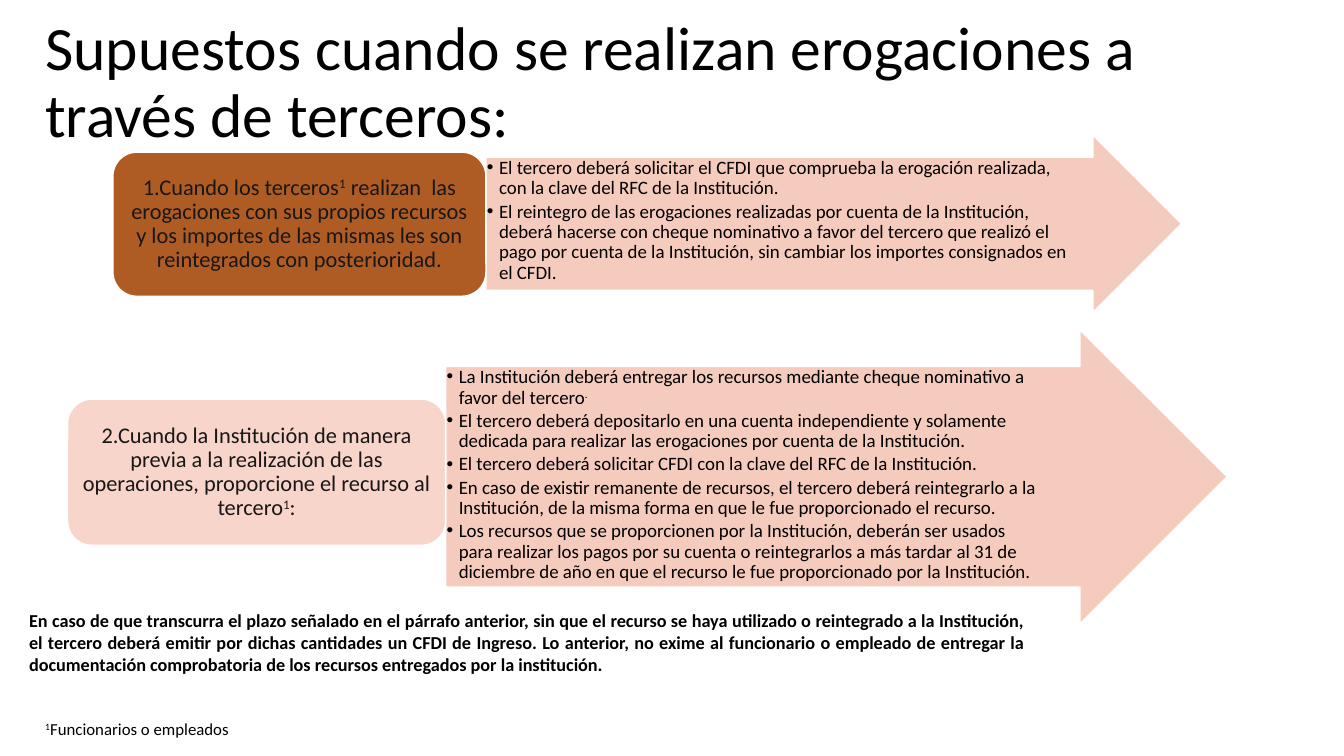
from pptx import Presentation
from pptx.dml.color import RGBColor
from pptx.enum.shapes import MSO_SHAPE
from pptx.enum.text import MSO_ANCHOR, PP_ALIGN
from pptx.oxml.ns import qn
from pptx.util import Inches, Pt
from lxml import etree

ARROW, ROUNDED = MSO_SHAPE.RIGHT_ARROW, MSO_SHAPE.ROUNDED_RECTANGLE
TOP, MIDDLE = MSO_ANCHOR.TOP, MSO_ANCHOR.MIDDLE
LEFT, CENTER, JUSTIFY = PP_ALIGN.LEFT, PP_ALIGN.CENTER, PP_ALIGN.JUSTIFY

BLACK = RGBColor(0x00, 0x00, 0x00)
WHITE = RGBColor(0xFF, 0xFF, 0xFF)
CHARCOAL = RGBColor(0x18, 0x17, 0x17)
RUST = RGBColor(0xAF, 0x5C, 0x24)
BLUSH = RGBColor(0xF7, 0xD5, 0xCA)
SALMON = RGBColor(0xF5, 0xC6, 0xB6)

FONT = "Calibri"
SUPERSCRIPT = "30000"
BULLET_INDENT = 0.12

TITLE = "Supuestos cuando se realizan erogaciones a través de terceros:"
CLOSING = (
    "En caso de que transcurra el plazo señalado en el párrafo anterior, sin que el recurso "
    "se haya utilizado o reintegrado a la Institución, el tercero deberá emitir por dichas "
    "cantidades un CFDI de Ingreso. Lo anterior, no exime al funcionario o empleado de entregar "
    "la documentación comprobatoria de los recursos entregados por la institución."
)

# Each paragraph is a list of spans; every second span is raised.
CASES = [
    {
        "label_box": (1.12, 1.51, 3.7, 1.43),
        "arrow_box": (4.82, 1.34, 6.9, 1.76),
        "color": RUST,
        "label": [
            "1.Cuando los terceros", "1",
            " realizan  las erogaciones con sus propios recursos y los importes de las mismas "
            "les son reintegrados con posterioridad.",
        ],
        "rules": [
            ["El tercero deberá solicitar el CFDI que comprueba la erogación realizada, con la "
             "clave del RFC de la Institución."],
            ["El reintegro de las erogaciones realizadas por cuenta de la Institución, deberá "
             "hacerse con cheque nominativo a favor del tercero que realizó el pago por cuenta "
             "de la Institución, sin cambiar los importes consignados en el CFDI."],
        ],
    },
    {
        "label_box": (0.67, 3.96, 3.75, 1.45),
        "arrow_box": (4.42, 3.27, 7.75, 2.92),
        "color": BLUSH,
        "label": [
            "2.Cuando la Institución de manera previa a la realización de las operaciones, "
            "proporcione el recurso al tercero", "1", ":",
        ],
        "rules": [
            ["La Institución deberá entregar los recursos mediante cheque nominativo a favor "
             "del tercero", "."],
            ["El tercero deberá depositarlo en una cuenta independiente y solamente dedicada "
             "para realizar las erogaciones por cuenta de la Institución."],
            ["El tercero deberá solicitar CFDI con la clave del RFC de la Institución."],
            ["En caso de existir remanente de recursos, el tercero deberá reintegrarlo a la "
             "Institución, de la misma forma en que le fue proporcionado el recurso."],
            ["Los recursos que se proporcionen por la Institución, deberán ser usados para "
             "realizar los pagos por su cuenta o reintegrarlos a más tardar al 31 de diciembre "
             "de año en que el recurso le fue proporcionado por la Institución."],
        ],
    },
]


def set_bullet(para):
    properties = para._p.get_or_add_pPr()
    properties.set("marL", str(Inches(BULLET_INDENT)))
    properties.set("indent", str(-Inches(BULLET_INDENT)))
    etree.SubElement(properties, qn("a:buFont")).set("typeface", "Arial")
    etree.SubElement(properties, qn("a:buChar")).set("char", "•")


def write(shape, paragraphs, size, color=BLACK, align=LEFT, anchor=TOP, spacing=1.0,
          insets=(0.1, 0.05, 0.1, 0.05), bold=False, bullets=False):
    """Fill a shape with paragraphs, raising every second span of each."""
    frame = shape.text_frame
    frame.word_wrap = True
    frame.vertical_anchor = anchor
    (frame.margin_left, frame.margin_top,
     frame.margin_right, frame.margin_bottom) = map(Inches, insets)
    for number, spans in enumerate(paragraphs):
        para = frame.add_paragraph() if number else frame.paragraphs[0]
        para.alignment = align
        para.line_spacing = spacing
        if bullets:
            para.space_after = Pt(2)
            set_bullet(para)
        for position, text in enumerate(spans):
            span = para.add_run()
            span.text = text
            span.font.name = FONT
            span.font.size = Pt(size)
            span.font.bold = bold
            span.font.color.rgb = color
            if position % 2:
                span._r.get_or_add_rPr().set("baseline", SUPERSCRIPT)


def add_panel(page, kind, box, color):
    panel = page.shapes.add_shape(kind, *map(Inches, box))
    panel.shadow.inherit = False
    panel.fill.solid()
    panel.fill.fore_color.rgb = color
    panel.line.color.rgb = WHITE
    panel.line.width = Pt(1)
    return panel


def add_rules_arrow(page, box, rules):
    arrow = add_panel(page, ARROW, box, SALMON)
    arrow.adjustments[0] = 0.75
    arrow.adjustments[1] = 0.5
    fill_color = arrow.fill._xPr.find(qn("a:solidFill"))[0]
    etree.SubElement(fill_color, qn("a:alpha")).set("val", "90000")
    head_margin = box[3] / 4
    write(arrow, rules, 13.5, spacing=0.9, bullets=True,
          insets=(0.01, 0.01, head_margin + 0.01, 0.01))


def add_case(page, case):
    """Draw one case: its rounded label and the arrow with its rules."""
    add_rules_arrow(page, case["arrow_box"], case["rules"])
    label = add_panel(page, ROUNDED, case["label_box"], case["color"])
    write(label, [case["label"]], 16, CHARCOAL, CENTER, MIDDLE, 0.9,
          insets=(0.07, 0.03, 0.07, 0.03))


def add_text(page, box, spans, size, **style):
    text_box = page.shapes.add_textbox(*map(Inches, box))
    write(text_box, [spans], size, **style)


def build_cases_slide(deck):
    page = deck.slides.add_slide(deck.slide_layouts[6])
    add_text(page, (0.35, 0.11, 12.14, 1.45), [TITLE], 44, anchor=MIDDLE, spacing=0.9)
    for case in CASES:
        add_case(page, case)
    add_text(page, (0.35, 7.08, 3.78, 0.3), ["", "1", "Funcionarios o empleados"], 12)
    add_text(page, (0.19, 6, 10.06, 0.76), [CLOSING], 13, align=JUSTIFY, bold=True)


def main():
    deck = Presentation()
    deck.slide_width = Inches(13.33)
    deck.slide_height = Inches(7.5)
    build_cases_slide(deck)
    deck.save("out.pptx")


if __name__ == "__main__":
    main()
